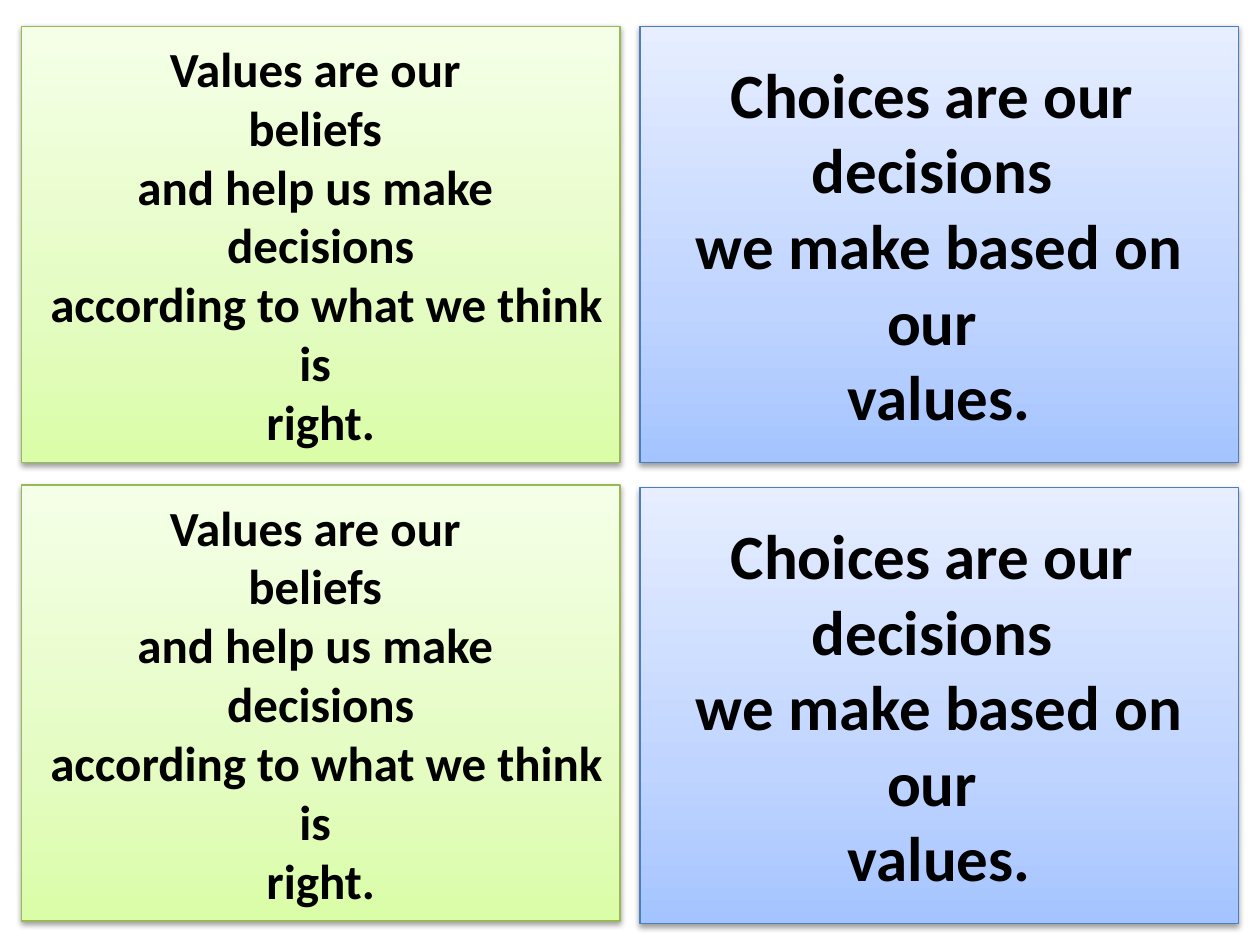
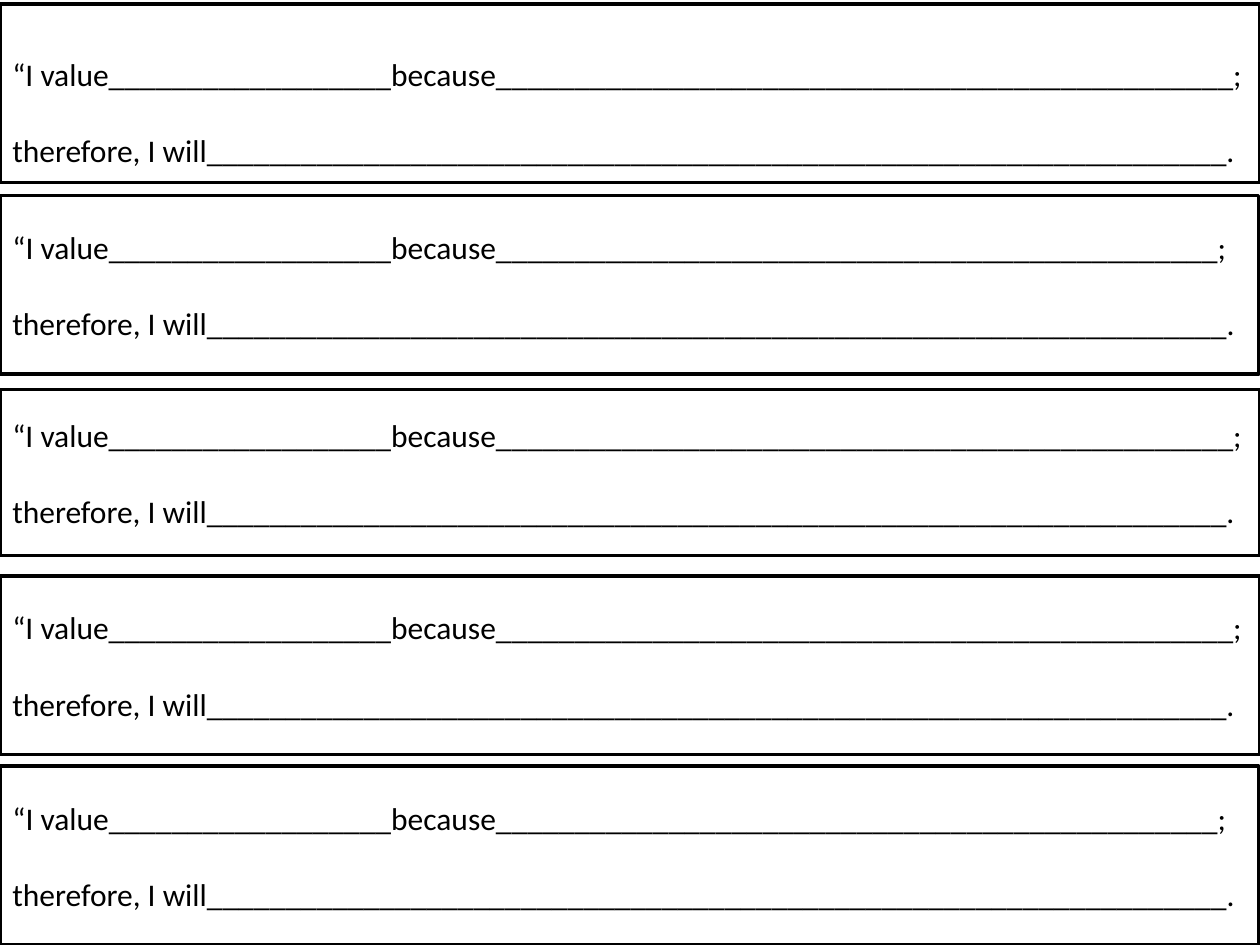
"""Build the values-and-choices cards and the value statement strips."""
from dataclasses import dataclass

import pptx
import pptx.dml.color
import pptx.enum.shapes
import pptx.enum.text
import pptx.oxml
import pptx.oxml.ns
import pptx.util
from lxml import etree

PX = 9144


@dataclass(frozen=True)
class Theme:
    font: str = "Calibri"
    ink: str = "000000"
    paper: str = "FFFFFF"
    values_line: str = "98B955"
    values_fade: tuple = ((0, "DAFDA7"), (35, "E4FCC2"), (100, "F5FFE7"))
    choices_line: str = "4B7EBC"
    choices_fade: tuple = ((0, "A4C4FF"), (35, "BFD4FF"), (100, "E6EEFF"))
    values_size: int = 28
    choices_size: int = 36
    strip_size: int = 18
    strip_gap: int = 22
    card_border: float = 0.75
    strip_border: int = 2


theme = Theme()
rgb = pptx.dml.color.RGBColor.from_string
qn = pptx.oxml.ns.qn


def add_box(slide, place, lines, size, bold, align, border, border_color):
    box = slide.shapes.add_shape(
        pptx.enum.shapes.MSO_SHAPE.RECTANGLE, *(n * PX for n in place))
    box.shadow.inherit = False
    box.line.color.rgb = rgb(border_color)
    box.line.width = pptx.util.Pt(border)
    frame = box.text_frame
    frame.word_wrap = True
    frame.vertical_anchor = pptx.enum.text.MSO_ANCHOR.MIDDLE
    for number, line in enumerate(lines):
        paragraph = frame.add_paragraph() if number else frame.paragraphs[0]
        paragraph.alignment = align
        run = paragraph.add_run()
        run.text = line
        run.font.name = theme.font
        run.font.size = pptx.util.Pt(size)
        run.font.bold = bold
        run.font.color.rgb = rgb(theme.ink)
    return box


def fade_and_lift(card, fade):
    card.fill.gradient()
    card.fill.gradient_angle = 90
    properties = card._element.spPr
    stops = properties.find(".//" + qn("a:gsLst"))
    for stop in list(stops):
        stops.remove(stop)
    for position, color in fade:
        stop = etree.SubElement(stops, qn("a:gs"), pos=str(position * 1000))
        etree.SubElement(stop, qn("a:srgbClr"), val=color)
    shadow = etree.SubElement(
        properties.find(qn("a:effectLst")), qn("a:outerShdw"),
        blurRad="40000", dist="20000", dir="5400000", rotWithShape="0")
    shade = etree.SubElement(shadow, qn("a:srgbClr"), val=theme.ink)
    etree.SubElement(shade, qn("a:alpha"), val="38000")


deck = pptx.Presentation()
deck.slide_width, deck.slide_height = 1000 * PX, 750 * PX
blank = deck.slide_layouts[6]

values_text = ("Values are our ", "beliefs ", "and help us make ", "decisions",
               " according to what we think is ", "right.")
choices_text = ("Choices are our ", "decisions ", "we make based on our ", "values.")
card_columns = (
    (17, (21, 385), values_text, theme.values_size, theme.values_line, theme.values_fade),
    (508, (21, 387), choices_text, theme.choices_size, theme.choices_line, theme.choices_fade),
)
cards_slide = deck.slides.add_slide(blank)
for left, tops, wording, size, outline, fade in card_columns:
    for top in tops:
        card = add_box(cards_slide, (left, top, 475, 346), wording, size, True,
                       pptx.enum.text.PP_ALIGN.CENTER, theme.card_border, outline)
        fade_and_lift(card, fade)

statement_strips = ((3, 1000, 142, 47, 35), (155, 999, 142, 46, 5), (309, 1000, 132, 47, 5),
                    (457, 1000, 142, 47, 5), (608, 999, 142, 46, 5))
strips_slide = deck.slides.add_slide(blank)
for top, width, height, reason_length, inset in statement_strips:
    statement = ("“I value" + "_" * 18 + "because" + "_" * reason_length + ";",
                 "therefore, I will" + "_" * 65 + ".")
    strip = add_box(strips_slide, (0, top, width, height), statement, theme.strip_size, False,
                    pptx.enum.text.PP_ALIGN.LEFT, theme.strip_border, theme.ink)
    strip.fill.solid()
    strip.fill.fore_color.rgb = rgb(theme.paper)
    strip.text_frame.margin_top = inset * PX
    strip.text_frame.paragraphs[1].space_before = pptx.util.Pt(theme.strip_gap)

deck.save("out.pptx")
